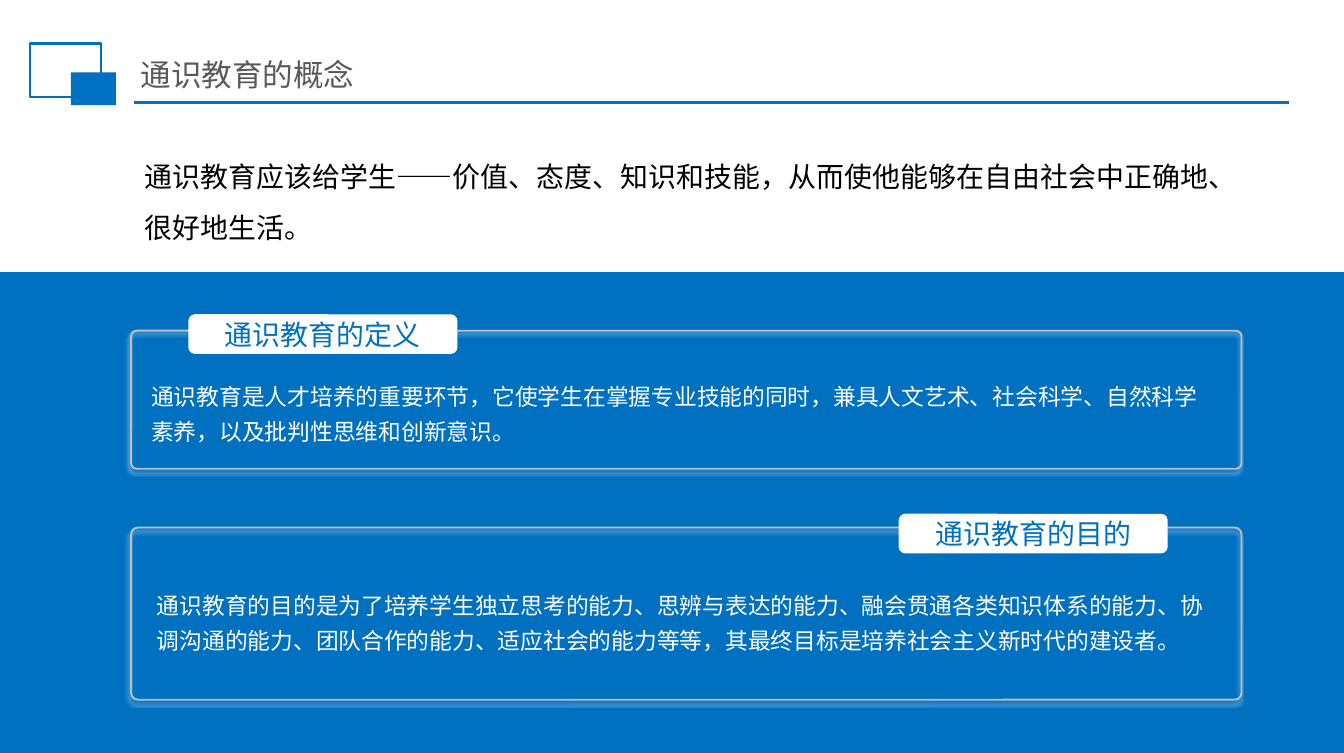
from lxml import etree
from pptx import Presentation
from pptx.dml.color import RGBColor
from pptx.enum.shapes import MSO_CONNECTOR, MSO_SHAPE
from pptx.enum.text import MSO_ANCHOR, MSO_AUTO_SIZE, PP_ALIGN
from pptx.oxml.ns import qn
from pptx.util import Inches, Pt

RECT, ROUND = MSO_SHAPE.RECTANGLE, MSO_SHAPE.ROUNDED_RECTANGLE
STRAIGHT = MSO_CONNECTOR.STRAIGHT
MIDDLE = MSO_ANCHOR.MIDDLE
LEFT, CENTER = PP_ALIGN.LEFT, PP_ALIGN.CENTER
NO_FIT, GROW = MSO_AUTO_SIZE.NONE, MSO_AUTO_SIZE.SHAPE_TO_FIT_TEXT

BLUE = RGBColor(0x00, 0x70, 0xC0)
WHITE = RGBColor(0xFF, 0xFF, 0xFF)
BLACK = RGBColor(0x00, 0x00, 0x00)
GREY = RGBColor(0x59, 0x59, 0x59)
SILVER = RGBColor(0xBF, 0xBF, 0xBF)

HAN, LATIN = "Noto Sans CJK SC", "Arial"

# Grid of 100 columns by 100 rows
WIDTH, HEIGHT = Inches(9.84), Inches(5.51)
EDGE, SPAN = 9.76, 82.62

# Tab label, tab column, card row, card rows, tab lift, text box, text
CARDS = [
    ("通识教育的定义", 14.02, 43.92, 18.33, 2.18, (10.26, 48.82, 81.3, 11.43),
     "通识教育是人才培养的重要环节，它使学生在掌握专业技能的同时，"
     "兼具人文艺术、社会科学、自然科学素养，以及批判性思维和创新意识。"),
    ("通识教育的目的", 66.87, 70.05, 22.87, 1.81, (10.67, 76.59, 80.89, 11.43),
     "通识教育的目的是为了培养学生独立思考的能力、思辨与表达的能力、"
     "融会贯通各类知识体系的能力、协调沟通的能力、团队合作的能力、"
     "适应社会的能力等等，其最终目标是培养社会主义新时代的建设者。"),
]


def grid(x, y, w, h):
    return (int(WIDTH * x / 100), int(HEIGHT * y / 100),
            int(WIDTH * w / 100), int(HEIGHT * h / 100))


def write(frame, text, size, color, face=HAN, align=LEFT, space=1.0):
    frame.word_wrap = True
    para = frame.paragraphs[0]
    para.alignment, para.line_spacing = align, space
    run = para.add_run()
    run.text = text
    font = run.font
    font.size, font.name = Pt(size), face
    font.color.rgb = color
    # East Asian glyphs need their own typeface entry
    east = etree.SubElement(run._r.get_or_add_rPr(), qn("a:ea"))
    east.set("typeface", HAN)


def add_box(slide, kind, area, fill=None, line=None, width=1):
    box = slide.shapes.add_shape(kind, *grid(*area))
    if fill is None:
        box.fill.background()
    else:
        box.fill.solid()
        box.fill.fore_color.rgb = fill
    if line is None:
        box.line.fill.background()
    else:
        box.line.color.rgb = line
        box.line.width = Pt(width)
    box.shadow.inherit = False
    return box


def add_text(slide, area, text, size, color, face, space):
    frame = slide.shapes.add_textbox(*grid(*area)).text_frame
    frame.auto_size = GROW
    write(frame, text, size, color, face, space=space)


def add_glow(box):
    effects = box._element.spPr.find(qn("a:effectLst"))
    glow = etree.SubElement(effects, qn("a:outerShdw"), blurRad=str(Pt(2)),
                            dist=str(Pt(2)), dir=str(135 * 60000),
                            algn="tr", rotWithShape="0")
    tint = etree.SubElement(glow, qn("a:srgbClr"), val=str(WHITE))
    etree.SubElement(tint, qn("a:alpha"), val="60000")


def add_head(slide, text):
    x, y, right, _ = grid(9.96, 13.61, 95.93, 0)
    rule = slide.shapes.add_connector(STRAIGHT, x, y, right, y)
    rule.line.color.rgb = BLUE
    rule.line.width = Pt(1.25)
    etree.SubElement(rule._element.spPr, qn("a:effectLst"))
    add_box(slide, RECT, (2.24, 5.81, 5.28, 7.08), line=BLUE, width=1.5)
    add_box(slide, RECT, (5.28, 9.62, 3.35, 4.36), fill=BLUE)

    title = slide.shapes.title
    title.left, title.top, title.width, title.height = grid(
        EDGE, 6.72, 64.53, 6.35)
    frame = title.text_frame
    frame.auto_size, frame.vertical_anchor = NO_FIT, MIDDLE
    frame.margin_left = frame.margin_right = Inches(0.07)
    frame.margin_top = frame.margin_bottom = Inches(0.04)
    write(frame, text, 16.1, GREY)


def add_card(slide, label, col, row, rows, lift, area, text):
    card = add_box(slide, ROUND, (EDGE, row, SPAN, rows), line=SILVER)
    card.adjustments[0] = 0.04
    add_glow(card)
    tab = add_box(slide, ROUND, (col, row - lift, 20.02, 5.26), fill=WHITE)
    tab.text_frame.vertical_anchor = MIDDLE
    write(tab.text_frame, label, 14.7, BLUE, align=CENTER)
    add_text(slide, area, text, 12, WHITE, LATIN, 1.3)


def main():
    deck = Presentation()
    deck.slide_width, deck.slide_height = WIDTH, HEIGHT
    slide = deck.slides.add_slide(deck.slide_layouts.get_by_name("Title Only"))

    # Heading
    add_head(slide, "通识教育的概念")

    # Lead text above the blue band
    add_box(slide, RECT, (0, 36.48, 100, 63.52), BLUE, BLUE, 3)
    add_text(slide, (EDGE, 18.15, SPAN, 15.25),
             "通识教育应该给学生——价值、态度、知识和技能，"
             "从而使他能够在自由社会中正确地、很好地生活。",
             14.7, BLACK, HAN, 1.5)

    # Cards with tabs
    for card in CARDS:
        add_card(slide, *card)

    deck.save("out.pptx")


if __name__ == "__main__":
    main()
